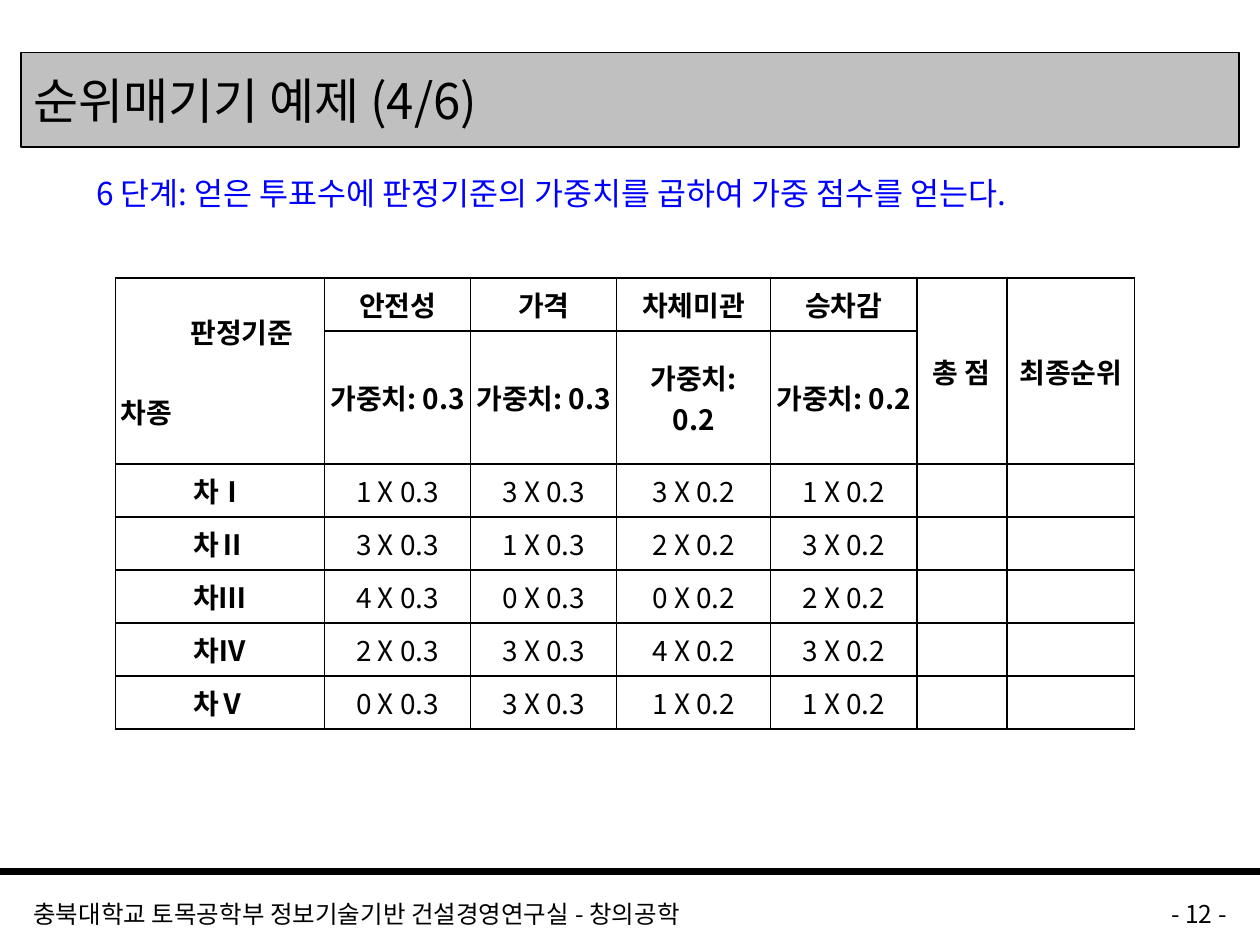
from typing import NamedTuple

import lxml.etree
import pptx
import pptx.dml.color
import pptx.enum.shapes
import pptx.enum.text
import pptx.oxml.ns
import pptx.util

Pt = pptx.util.Pt
RGBColor = pptx.dml.color.RGBColor
PP_ALIGN = pptx.enum.text.PP_ALIGN
MSO_ANCHOR = pptx.enum.text.MSO_ANCHOR
qn = pptx.oxml.ns.qn

BLACK = RGBColor(0x00, 0x00, 0x00)
GRAY = RGBColor(0xC0, 0xC0, 0xC0)
BLUE = RGBColor(0x00, 0x00, 0xFF)
FONT = "Noto Sans CJK KR"
CELL_SIZE = 16


class Label(NamedTuple):
    text: str
    left: float
    top: float
    width: float
    height: float
    size: float
    color: RGBColor = BLACK
    align: PP_ALIGN = PP_ALIGN.LEFT
    indent: int = 0
    hanging: int = 0


class Car(NamedTuple):
    name: str
    votes: tuple[int, ...]


class Criterion(NamedTuple):
    name: str
    weight: str
    separator: str = " "


LABELS = [
    Label("충북대학교 토목공학부 정보기술기반 건설경영연구실 - 창의공학", 12, 510, 564, 18, 14),
    Label("- 12 -", 588, 510, 120, 18, 14, align=PP_ALIGN.RIGHT),
    Label("6 단계: 얻은 투표수에 판정기준의 가중치를 곱하여 가중 점수를 얻는다.",
          12, 96, 696, 42, 18, BLUE, indent=104, hanging=-68),
]
CRITERIA = [
    Criterion("안전성", "0.3"),
    Criterion("가격", "0.3"),
    Criterion("차체미관", "0.2", "\n"),
    Criterion("승차감", "0.2"),
]
CARS = [
    Car("차Ⅰ", (1, 3, 3, 1)),
    Car("차Ⅱ", (3, 1, 2, 3)),
    Car("차Ⅲ", (4, 0, 0, 2)),
    Car("차Ⅳ", (2, 3, 4, 3)),
    Car("차Ⅴ", (0, 3, 1, 1)),
]
COL_WIDTHS = [119.5, 83.5, 83.5, 88, 83.5, 51.5, 73]
ROW_HEIGHTS = [30.3, 76] + [30.3] * len(CARS)


def style_text(tf, size: float, color: RGBColor = BLACK, bold: bool = False,
               align: PP_ALIGN = PP_ALIGN.LEFT) -> None:
    for p in tf.paragraphs:
        p.alignment = align
        for r in p.runs:
            r.font.size = Pt(size)
            r.font.bold = bold
            r.font.name = FONT
            r.font.color.rgb = color
            ea = lxml.etree.Element(qn("a:ea"), typeface=FONT)
            r.font._element.find(qn("a:latin")).addnext(ea)
        if not p.runs:
            lxml.etree.SubElement(p._p, qn("a:endParaRPr"), sz=str(size * 100))


def add_label(s, label: Label) -> None:
    sp = s.shapes.add_textbox(Pt(label.left), Pt(label.top), Pt(label.width), Pt(label.height))
    tf = sp.text_frame
    tf.word_wrap = True
    tf.text = label.text
    style_text(tf, label.size, label.color, align=label.align)
    if label.indent:
        pPr = tf.paragraphs[0]._p.get_or_add_pPr()
        pPr.set("marL", str(Pt(label.indent)))
        pPr.set("indent", str(Pt(label.hanging)))


def add_title(s) -> None:
    sp = s.shapes.add_shape(pptx.enum.shapes.MSO_SHAPE.RECTANGLE, Pt(12), Pt(30), Pt(696), Pt(54))
    sp.shadow.inherit = False
    sp.fill.solid()
    sp.fill.fore_color.rgb = GRAY
    sp.line.color.rgb = BLACK
    sp.line.width = Pt(0.75)
    tf = sp.text_frame
    tf.word_wrap = True
    tf.vertical_anchor = MSO_ANCHOR.MIDDLE
    tf.text = "순위매기기 예제 (4/6)"
    style_text(tf, 28)


def add_footer_rule(s) -> None:
    y = Pt(498)
    line = s.shapes.add_connector(pptx.enum.shapes.MSO_CONNECTOR.STRAIGHT, 0, y, Pt(720), y)
    line.line.color.rgb = BLACK
    line.line.width = Pt(4.5)
    lxml.etree.SubElement(line._element.spPr, qn("a:effectLst"))


def add_borders(cell) -> None:
    tcPr = cell._tc.get_or_add_tcPr()
    for i, side in enumerate(("lnL", "lnR", "lnT", "lnB")):
        ln = lxml.etree.Element(qn(f"a:{side}"), w=str(Pt(1)))
        fill = lxml.etree.SubElement(ln, qn("a:solidFill"))
        lxml.etree.SubElement(fill, qn("a:srgbClr"), val=str(BLACK))
        tcPr.insert(i, ln)


def table_rows() -> list[list[str]]:
    names = ["판정기준\n차종"] + [c.name for c in CRITERIA] + ["총 점", "최종순위"]
    weights = [""] + [f"가중치:{c.separator}{c.weight}" for c in CRITERIA] + ["", ""]
    scores = [
        [car.name] + [f"{v} X {c.weight}" for v, c in zip(car.votes, CRITERIA)] + ["", ""]
        for car in CARS
    ]
    return [names, weights] + scores


def add_score_table(s) -> None:
    frame = s.shapes.add_table(len(ROW_HEIGHTS), len(COL_WIDTHS), Pt(66), Pt(159),
                               Pt(sum(COL_WIDTHS)), Pt(sum(ROW_HEIGHTS)))
    table = frame.table
    table.first_row = table.horz_banding = False
    for col, width in zip(table.columns, COL_WIDTHS):
        col.width = Pt(width)
    for row, height in zip(table.rows, ROW_HEIGHTS):
        row.height = Pt(height)
    for i, row in enumerate(table_rows()):
        for j, text in enumerate(row):
            cell = table.cell(i, j)
            cell.text = text
            cell.vertical_anchor = MSO_ANCHOR.MIDDLE
            cell.margin_left = cell.margin_right = Pt(3)
            cell.margin_top = cell.margin_bottom = Pt(3.5)
            cell.fill.background()
            style_text(cell.text_frame, CELL_SIZE, bold=i < 2 or j == 0, align=PP_ALIGN.CENTER)
            add_borders(cell)
    for j in (0, 5, 6):
        table.cell(0, j).merge(table.cell(1, j))
    criterion, car = table.cell(0, 0).text_frame.paragraphs
    criterion.alignment = car.alignment = PP_ALIGN.JUSTIFY
    criterion._p.get_or_add_pPr().set("marL", str(Pt(40)))
    car.space_before = Pt(23)


def main() -> None:
    prs = pptx.Presentation()
    prs.slide_width = Pt(720)
    prs.slide_height = Pt(540)
    s = prs.slides.add_slide(prs.slide_layouts[6])
    add_footer_rule(s)
    add_title(s)
    for label in LABELS:
        add_label(s, label)
    add_score_table(s)
    prs.save("out.pptx")


if __name__ == "__main__":
    main()
